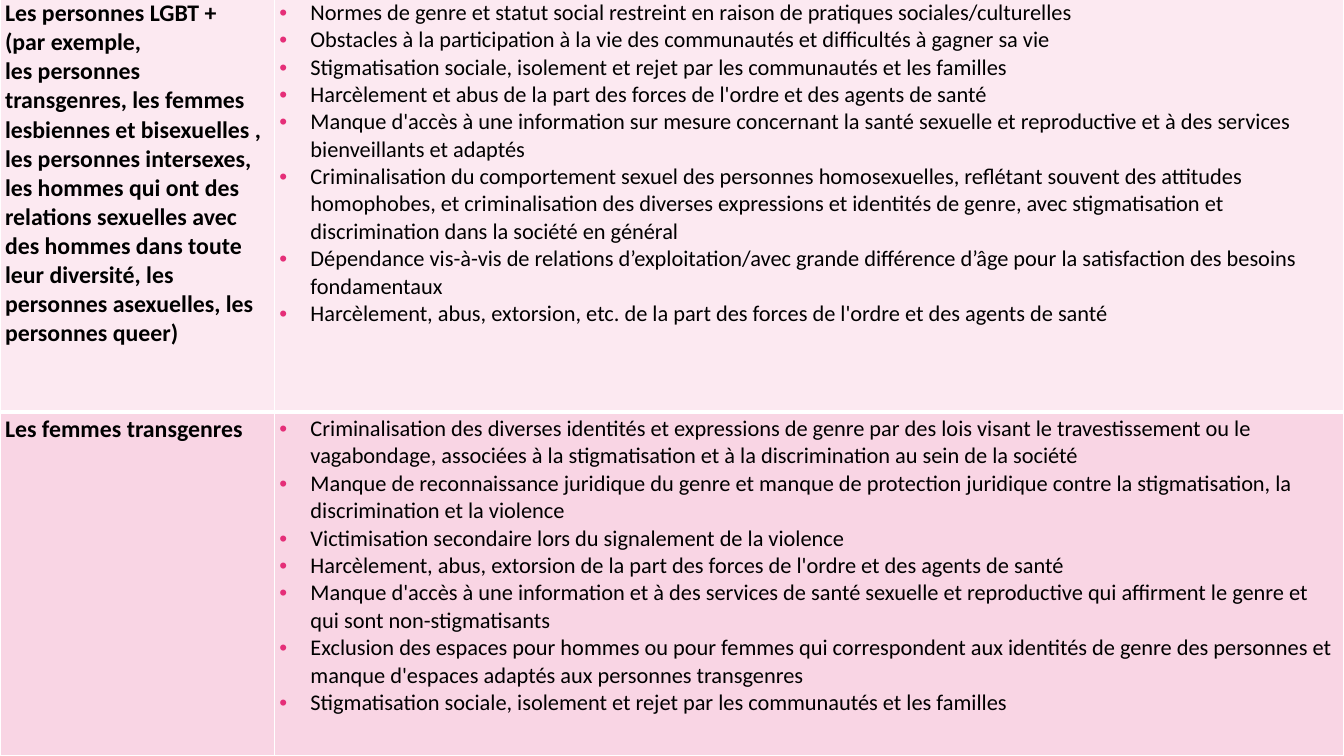
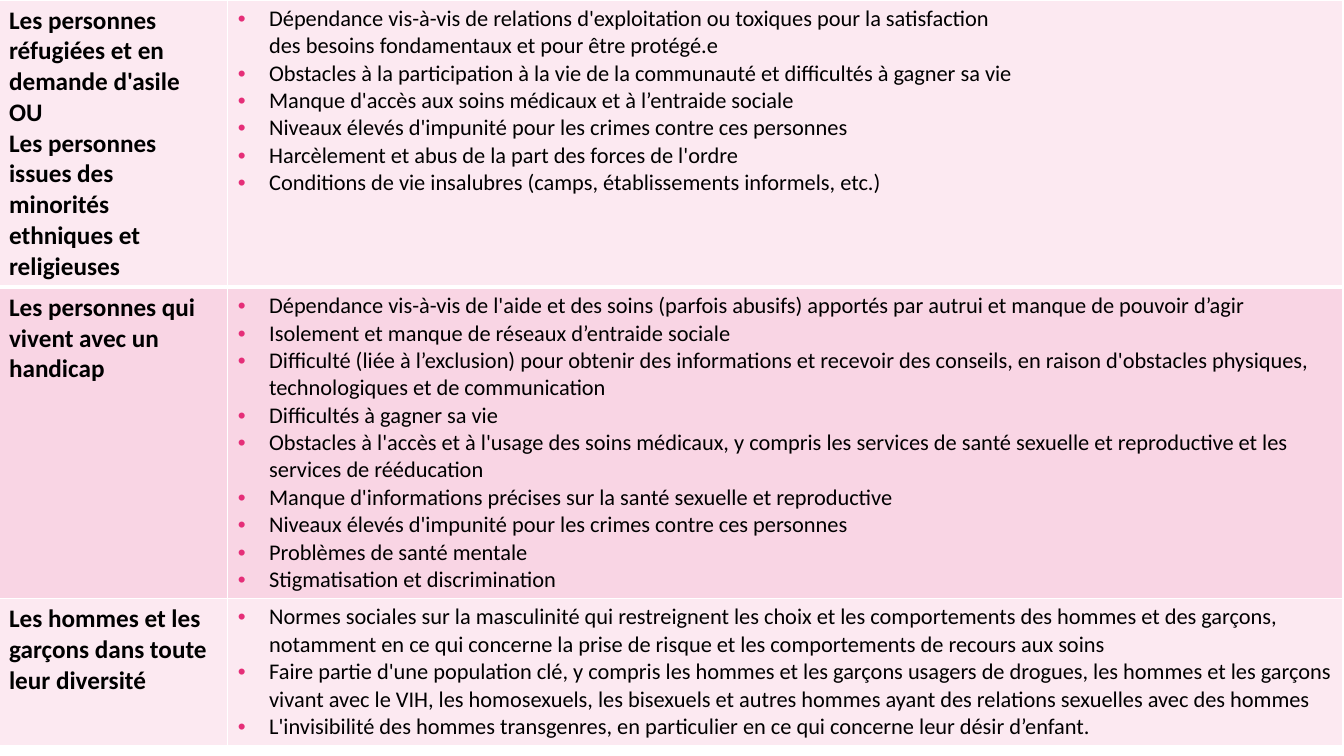
from lxml.etree import SubElement
from pptx import Presentation
from pptx.dml.color import RGBColor
from pptx.oxml import parse_xml
from pptx.oxml.ns import nsdecls, qn
from pptx.util import Inches, Pt

COLORS = {"pink": "E52E78", "text": "000000", "line": "FFFFFF"}
TINTS = [10, 20]  # opacity of alternate rows, in percent
HEAD = {"name": "Calibri", "bold": True}
BODY = {"name": "Calibri", "bold": False, "size": Pt(16)}
INDENT = Inches(0.31)

GROUPS = [
    (
        ["Les personnes LGBT +",
         "(par exemple,\nles personnes\ntransgenres, les femmes lesbiennes et bisexuelles , "
         "les personnes intersexes, les hommes qui ont des relations sexuelles avec des hommes "
         "dans toute leur diversité, les personnes asexuelles, les personnes queer)"],
        ["Normes de genre et statut social restreint en raison de pratiques sociales/culturelles",
         "Obstacles à la participation à la vie des communautés et difficultés à gagner sa vie",
         "Stigmatisation sociale, isolement et rejet par les communautés et les familles",
         "Harcèlement et abus de la part des forces de l'ordre et des agents de santé",
         "Manque d'accès à une information sur mesure concernant la santé sexuelle et "
         "reproductive et à des services bienveillants et adaptés",
         "Criminalisation du comportement sexuel des personnes homosexuelles, reflétant souvent "
         "des attitudes homophobes, et criminalisation des diverses expressions et identités de "
         "genre, avec stigmatisation et discrimination dans la société en général",
         "Dépendance vis-à-vis de relations d’exploitation/avec grande différence d’âge pour la "
         "satisfaction des besoins fondamentaux",
         "Harcèlement, abus, extorsion, etc. de la part des forces de l'ordre et des agents de santé"],
    ),
    (
        ["Les femmes transgenres"],
        ["Criminalisation des diverses identités et expressions de genre par des lois visant le "
         "travestissement ou le vagabondage, associées à la stigmatisation et à la discrimination "
         "au sein de la société",
         "Manque de reconnaissance juridique du genre et manque de protection juridique contre la "
         "stigmatisation, la discrimination et la violence",
         "Victimisation secondaire lors du signalement de la violence",
         "Harcèlement, abus, extorsion de la part des forces de l'ordre et des agents de santé",
         "Manque d'accès à une information et à des services de santé sexuelle et reproductive "
         "qui affirment le genre et qui sont non-stigmatisants",
         "Exclusion des espaces pour hommes ou pour femmes qui correspondent aux identités de "
         "genre des personnes et manque d'espaces adaptés aux personnes transgenres",
         "Stigmatisation sociale, isolement et rejet par les communautés et les familles"],
    ),
]

OTHERS = [
    (
        ["Les personnes réfugiées et en demande d'asile",
         "OU",
         "Les personnes issues des minorités ethniques et religieuses"],
        ["Dépendance vis-à-vis de relations d'exploitation ou toxiques pour la satisfaction\n"
         "des besoins fondamentaux et pour être protégé.e",
         "Obstacles à la participation à la vie de la communauté et difficultés à gagner sa vie",
         "Manque d'accès aux soins médicaux et à l’entraide sociale",
         "Niveaux élevés d'impunité pour les crimes contre ces personnes",
         "Harcèlement et abus de la part des forces de l'ordre",
         "Conditions de vie insalubres (camps, établissements informels, etc.)"],
    ),
    (
        ["Les personnes qui vivent avec un handicap"],
        ["Dépendance vis-à-vis de l'aide et des soins (parfois abusifs) apportés par autrui et "
         "manque de pouvoir d’agir",
         "Isolement et manque de réseaux d’entraide sociale",
         "Difficulté (liée à l’exclusion) pour obtenir des informations et recevoir des conseils, "
         "en raison d'obstacles physiques, technologiques et de communication",
         "Difficultés à gagner sa vie",
         "Obstacles à l'accès et à l'usage des soins médicaux, y compris les services de santé "
         "sexuelle et reproductive et les services de rééducation",
         "Manque d'informations précises sur la santé sexuelle et reproductive",
         "Niveaux élevés d'impunité pour les crimes contre ces personnes",
         "Problèmes de santé mentale",
         "Stigmatisation et discrimination"],
    ),
    (
        ["Les hommes et les garçons dans toute leur diversité"],
        ["Normes sociales sur la masculinité qui restreignent les choix et les comportements des "
         "hommes et des garçons, notamment en ce qui concerne la prise de risque et les "
         "comportements de recours aux soins",
         "Faire partie d'une population clé, y compris les hommes et les garçons usagers de "
         "drogues, les hommes et les garçons vivant avec le VIH, les homosexuels, les bisexuels "
         "et autres hommes ayant des relations sexuelles avec des hommes",
         "L'invisibilité des hommes transgenres, en particulier en ce qui concerne leur désir "
         "d’enfant."],
    ),
]

# Table place, row heights, head size and cell margins of each slide
SLIDES = [
    {"rows": GROUPS, "box": (0, -0.04, 13.33), "side": 2.72, "tall": [4.13, 3.41],
     "size": 17, "pad": (0.05, 0.03)},
    {"rows": OTHERS, "box": (-0.01, 0, 13.33), "side": 2.27, "tall": [2.85, 3.08, 1.46],
     "size": 18, "pad": (0.1, 0.05)},
]


def add_bullet(para):
    props = para._p.get_or_add_pPr()
    props.set("marL", str(INDENT))
    props.set("indent", str(-INDENT))
    color = SubElement(props, qn("a:buClr"))
    SubElement(color, qn("a:srgbClr")).set("val", COLORS["pink"])
    SubElement(props, qn("a:buFont")).set("typeface", "Arial")
    SubElement(props, qn("a:buChar")).set("char", "•")


def write(cell, lines, style, bullet=False):
    frame = cell.text_frame
    for i, line in enumerate(lines):
        para = frame.paragraphs[0] if i == 0 else frame.add_paragraph()
        para.text = line
        if bullet:
            add_bullet(para)
        for run in para.runs:
            for key, value in style.items():
                setattr(run.font, key, value)
            run.font.color.rgb = RGBColor.from_string(COLORS["text"])


def paint(cell, tint, base, pad):
    wide, high = map(Inches, pad)
    margins = {"margin_left": wide, "margin_right": wide,
               "margin_top": high, "margin_bottom": high}
    for key, value in margins.items():
        setattr(cell, key, value)
    # Translucent fill
    cell.fill.solid()
    cell.fill.fore_color.rgb = RGBColor.from_string(COLORS["pink"])
    props = cell._tc.get_or_add_tcPr()
    color = props.find(".//" + qn("a:srgbClr"))
    SubElement(color, qn("a:alpha")).set("val", str(tint * 1000))
    # Borders come before the fill
    for i, edge in enumerate("LRTB"):
        width = Pt(base if edge == "B" else 1)
        props.insert(i, parse_xml(
            f'<a:ln{edge} {nsdecls("a")} w="{width}"><a:solidFill>'
            f'<a:srgbClr val="{COLORS["line"]}"/></a:solidFill></a:ln{edge}>'))


def add_grid(slide, rows, box, side, tall, size, pad):
    left, top, width = box
    table = slide.shapes.add_table(
        len(rows), 2, Inches(left), Inches(top), Inches(width), Inches(sum(tall))).table
    for key in ("first_row", "horz_banding"):
        setattr(table, key, False)
    for col, span in zip(table.columns, (side, width - side)):
        col.width = Inches(span)
    for i, (names, risks) in enumerate(rows):
        table.rows[i].height = Inches(tall[i])
        head, body = table.cell(i, 0), table.cell(i, 1)
        write(head, names, {**HEAD, "size": Pt(size)})
        write(body, risks, BODY, bullet=True)
        for cell in (head, body):
            paint(cell, TINTS[i % 2], 3 if i == 0 else 1, pad)


def main():
    deck = Presentation()
    deck.slide_width, deck.slide_height = Inches(13.33), Inches(7.5)
    for page in SLIDES:
        add_grid(deck.slides.add_slide(deck.slide_layouts[6]), **page)
    deck.save("out.pptx")


if __name__ == "__main__":
    main()
